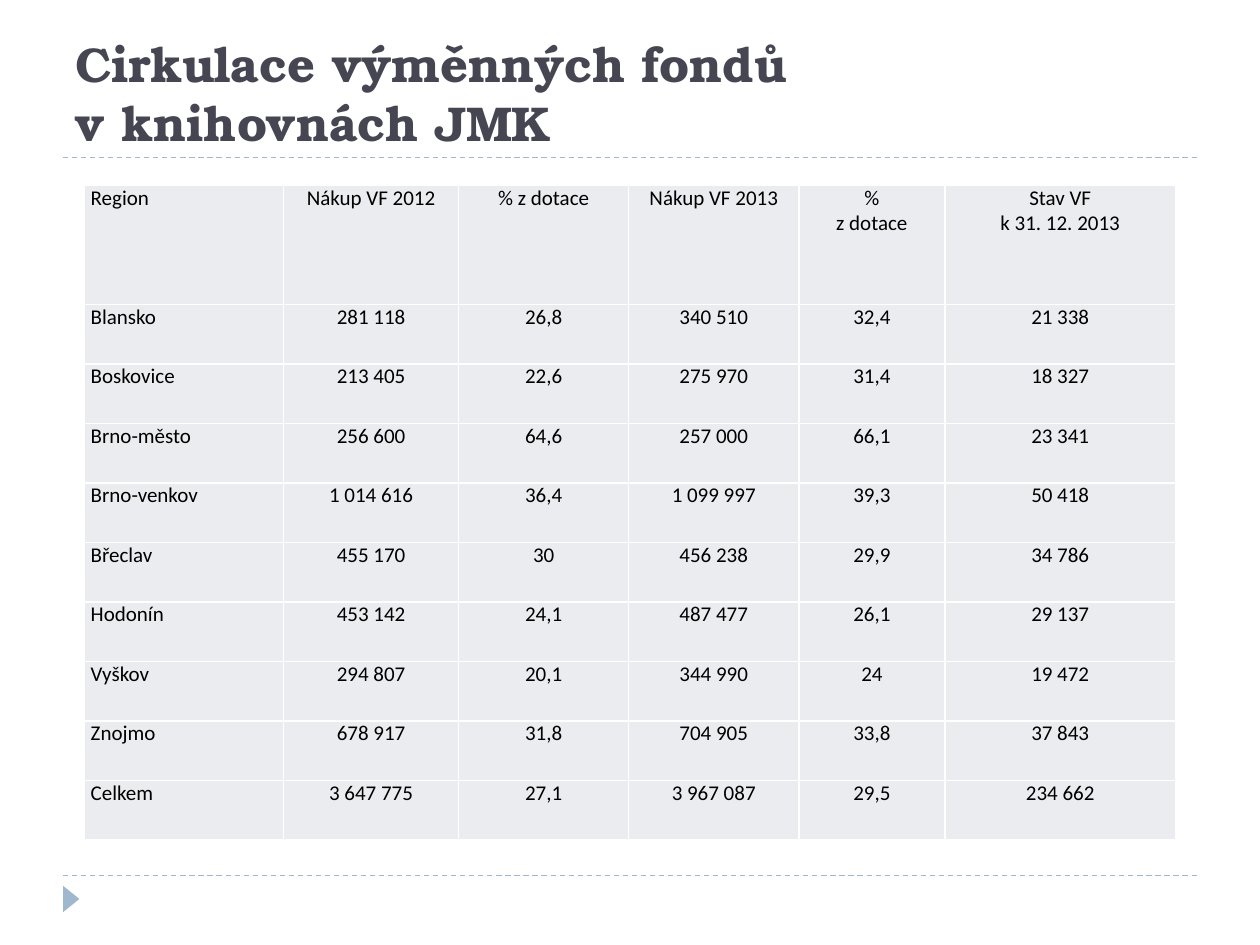
from dataclasses import dataclass

from lxml import etree
from pptx import Presentation
from pptx.dml.color import RGBColor
from pptx.enum.dml import MSO_LINE
from pptx.enum.shapes import MSO_CONNECTOR, MSO_SHAPE
from pptx.enum.text import MSO_ANCHOR, PP_ALIGN
from pptx.oxml.ns import qn
from pptx.util import Inches, Pt

DASH = MSO_LINE.DASH
STRAIGHT = MSO_CONNECTOR.STRAIGHT
TRIANGLE = MSO_SHAPE.ISOSCELES_TRIANGLE
BOTTOM = MSO_ANCHOR.BOTTOM
CENTER, JUSTIFY = PP_ALIGN.CENTER, PP_ALIGN.JUSTIFY


@dataclass(frozen=True)
class Theme:
    ink: str = "464653"
    accent: str = "9FB8CD"
    fill: str = "EBECF0"
    border: str = "FFFFFF"
    text: str = "000000"
    head: str = "TeX Gyre Bonum"
    body: str = "Calibri"
    big: float = 27.9
    small: float = 12
    rule: float = 0.75
    edge: float = 1


THEME = Theme()
TITLE = "Cirkulace výměnných fondů\vv knihovnách JMK"
WIDTHS = [1.58, 1.39, 1.35, 1.35, 1.16, 1.83]
ROWS = [
    ["Region", "Nákup VF 2012", "% z dotace", "Nákup VF 2013",
     "%\nz dotace", "Stav VF\nk 31. 12. 2013"],
    ["Blansko", "281 118", "26,8", "340 510", "32,4", "21 338"],
    ["Boskovice", "213 405", "22,6", "275 970", "31,4", "18 327"],
    ["Brno-město", "256 600", "64,6", "257 000", "66,1", "23 341"],
    ["Brno-venkov", "1 014 616", "36,4", "1 099 997", "39,3", "50 418"],
    ["Břeclav", "455 170", "30", "456 238", "29,9", "34 786"],
    ["Hodonín", "453 142", "24,1", "487 477", "26,1", "29 137"],
    ["Vyškov", "294 807", "20,1", "344 990", "24", "19 472"],
    ["Znojmo", "678 917", "31,8", "704 905", "33,8", "37 843"],
    ["Celkem", "3 647 775", "27,1", "3 967 087", "29,5", "234 662"],
]


def style(frame, font, size, color, bold=False):
    for para in frame.paragraphs:
        for run in para.runs:
            run.font.name = font
            run.font.size = Pt(size)
            run.font.bold = bold
            run.font.color.rgb = RGBColor.from_string(color)


def add_rule(slide, left, top, width):
    line = slide.shapes.add_connector(
        STRAIGHT, Inches(left), Inches(top), Inches(left + width), Inches(top))
    line.line.color.rgb = RGBColor.from_string(THEME.accent)
    line.line.width = Pt(THEME.rule)
    line.line.dash_style = DASH
    etree.SubElement(line._element.spPr, qn("a:effectLst"))


def add_title(slide, left, top, width, height):
    add_rule(slide, left, top + height, width)
    box = slide.shapes.add_textbox(
        Inches(left), Inches(top), Inches(width), Inches(height))
    frame = box.text_frame
    frame.word_wrap = True
    frame.vertical_anchor = BOTTOM
    frame.text = TITLE
    style(frame, THEME.head, THEME.big, THEME.ink, bold=True)


def add_footer(slide, left, top, width):
    add_rule(slide, left, top, width)
    mark = slide.shapes.add_shape(
        TRIANGLE, Inches(left - 0.04), Inches(top + 0.12),
        Inches(0.21), Inches(0.13))
    mark.rotation = 90
    mark.shadow.inherit = False
    mark.fill.solid()
    mark.fill.fore_color.rgb = RGBColor.from_string(THEME.accent)
    mark.line.fill.background()


def add_edges(cell):
    props = cell._tc.get_or_add_tcPr()
    for side in ("lnL", "lnR", "lnT", "lnB"):
        line = etree.SubElement(
            props, qn(f"a:{side}"), w=str(Pt(THEME.edge)))
        fill = etree.SubElement(line, qn("a:solidFill"))
        etree.SubElement(fill, qn("a:srgbClr"), val=THEME.border)


def fill_cell(cell, text, align):
    cell.margin_left = cell.margin_right = Inches(0.05)
    cell.margin_top = cell.margin_bottom = 0
    add_edges(cell)
    cell.fill.solid()
    cell.fill.fore_color.rgb = RGBColor.from_string(THEME.fill)
    cell.text_frame.text = text
    style(cell.text_frame, THEME.body, THEME.small, THEME.text)
    for para in cell.text_frame.paragraphs:
        para.alignment = align


def add_grid(slide, left, top, width, height):
    table = slide.shapes.add_table(
        len(ROWS), len(WIDTHS), Inches(left), Inches(top),
        Inches(width), Inches(height)).table
    table.first_row = table.horz_banding = False
    for col, size in zip(table.columns, WIDTHS):
        col.width = Inches(width * size / sum(WIDTHS))
    unit = height / (len(ROWS) + 1)
    for r, row in enumerate(ROWS):
        table.rows[r].height = Inches(unit if r else 2 * unit)
        for c, text in enumerate(row):
            fill_cell(table.cell(r, c), text, CENTER if c else JUSTIFY)


def main():
    deck = Presentation()
    deck.slide_width, deck.slide_height = Inches(10), Inches(7.5)
    slide = deck.slides.add_slide(deck.slide_layouts[6])
    add_footer(slide, 0.5, 6.95, 9)
    add_title(slide, 0.5, 0.17, 9, 1.08)
    add_grid(slide, 0.67, 1.47, 8.66, 5.2)
    deck.save("out.pptx")


if __name__ == "__main__":
    main()
